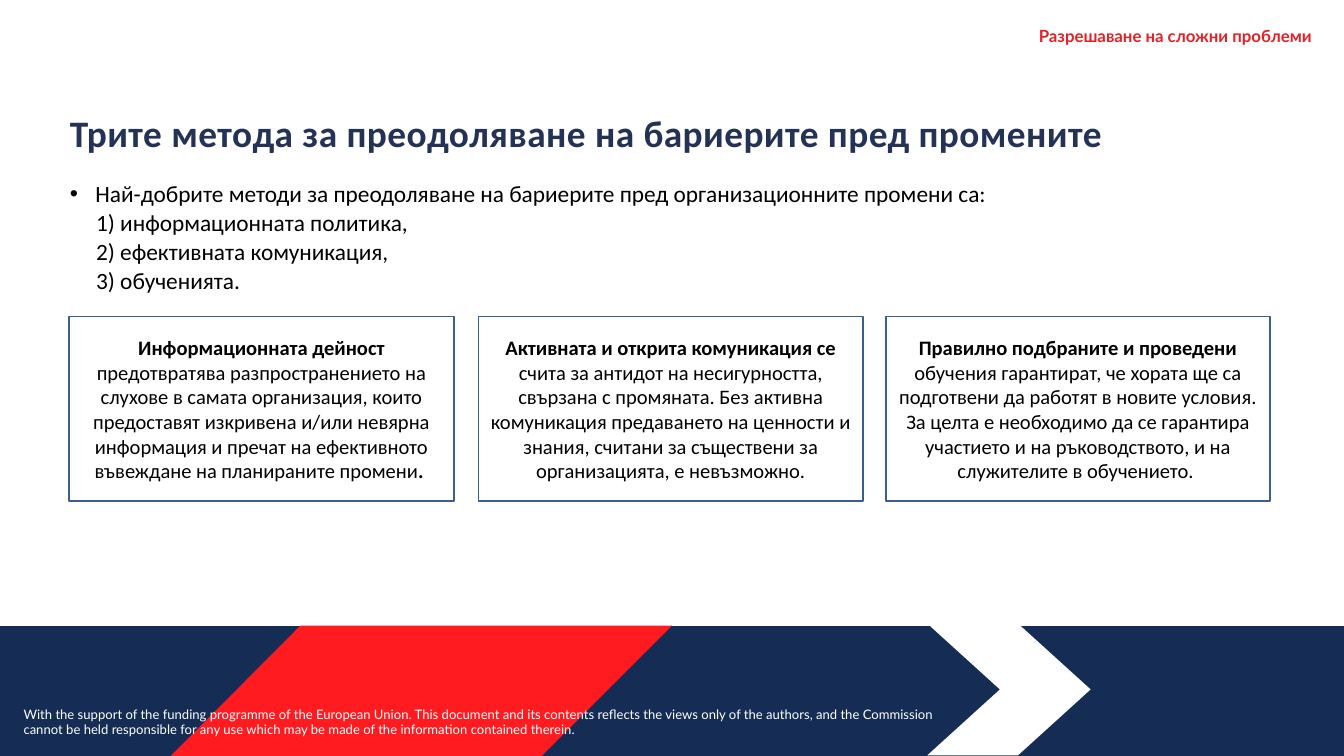
from dataclasses import dataclass

from lxml import etree
from pptx import Presentation
from pptx.dml.color import RGBColor
from pptx.enum.shapes import MSO_SHAPE
from pptx.enum.text import MSO_ANCHOR, PP_ALIGN
from pptx.oxml.ns import qn
from pptx.util import Inches, Pt

PROCESS = MSO_SHAPE.FLOWCHART_PROCESS
MIDDLE = MSO_ANCHOR.MIDDLE
CENTER, RIGHT = PP_ALIGN.CENTER, PP_ALIGN.RIGHT


@dataclass(frozen=True)
class Theme:
    navy: str = "152D54"
    red: str = "FF1B20"
    white: str = "FFFFFF"
    black: str = "000000"
    title: str = "243255"
    topic: str = "E12227"
    border: str = "3A5F8C"
    body_font: str = "Calibri"
    accent_font: str = "Lato"
    title_size: int = 40
    list_size: int = 25
    box_size: int = 22
    topic_size: int = 18
    footer_size: int = 14


T = Theme()


def add_run(p, text, color, **font):
    r = p.add_run()
    r.text = text
    r.font.color.rgb = RGBColor.from_string(color)
    for name, value in font.items():
        setattr(r.font, name, value)
    return r


def add_text_box(shapes, left, top, width, height, inset_top):
    """Add a wrapping text box without side insets and return its text frame."""
    tf = shapes.add_textbox(*map(Inches, (left, top, width, height))).text_frame
    margins = {"margin_left": 0, "margin_right": 0, "margin_bottom": 0,
               "margin_top": Inches(inset_top), "word_wrap": True}
    for name, value in margins.items():
        setattr(tf, name, value)
    return tf


prs = Presentation()
prs.slide_width, prs.slide_height = Inches(20), Inches(11.25)
s = prs.slides.add_slide(prs.slide_layouts[6])

# Footer band, white chevron and red slanted stripe
footer_art = [
    (T.navy, [(0, 9.31), (20, 9.31), (20, 11.25), (0, 11.25)]),
    (T.white, [(13.8, 9.28), (15.15, 9.28), (16.23, 10.26),
               (15.15, 11.24), (13.8, 11.24), (14.88, 10.26)]),
    (T.red, [(4.47, 9.31), (10, 9.31), (8.06, 11.25), (2.54, 11.25)]),
]
for color, corners in footer_art:
    points = [(Inches(x), Inches(y)) for x, y in corners]
    builder = s.shapes.build_freeform(*points[0])
    builder.add_line_segments(points[1:], close=True)
    sp = builder.convert_to_shape()
    sp.shadow.inherit = False
    sp.fill.solid()
    sp.fill.fore_color.rgb = RGBColor.from_string(color)
    sp.line.fill.background()

# Title and list of methods
tf = add_text_box(s.shapes, 1.04, 1.62, 15.8, 2.85, 0.02)
p = tf.paragraphs[0]
p.space_before = Pt(1.1)
r = add_run(p, "Трите метода за преодоляване на бариерите пред промените",
            T.title, name=T.body_font, size=Pt(T.title_size), bold=True)
r._r.get_or_add_rPr().set("spc", "50")

methods = [
    "Най-добрите методи за преодоляване на бариерите пред организационните промени са:",
    "1) информационната политика,",
    "2) ефективната комуникация,",
    "3) обученията.",
]
for i, text in enumerate(methods):
    p = tf.add_paragraph()
    p.space_before = Pt(1.1 if i else 26)
    pPr = p._p.get_or_add_pPr()
    pPr.set("marL", str(Inches(0.39 if i else 0.38)))
    if i == 0:
        pPr.set("indent", str(Inches(-0.38)))
        etree.SubElement(pPr, qn("a:buFont")).set("typeface", "Arial")
        etree.SubElement(pPr, qn("a:buChar")).set("char", "•")
    add_run(p, text, T.black, name=T.body_font, size=Pt(T.list_size))

# Funding note
tf = add_text_box(s.shapes, 0.35, 10.46, 13.55, 0.57, 0.05)
add_run(tf.paragraphs[0],
        "With the support of the funding programme of the European Union. "
        "This document and its contents reflects the views only of the authors, "
        "and the Commission cannot be held responsible for any use which may be "
        "made of the information contained therein.",
        T.white, name=T.accent_font, size=Pt(T.footer_size))

# One box per method: left edge, then (text, bold) runs
boxes = [
    (1.03, [("Информационната дейност ", True),
            ("предотвратява разпространението на слухове в самата организация, "
             "които предоставят изкривена и/или невярна информация и пречат на "
             "ефективното въвеждане на планираните промени", False),
            (". ", True)]),
    (7.12, [("Активната и открита комуникация се ", True),
            ("счита за антидот на несигурността, свързана с промяната. Без активна "
             "комуникация предаването на ценности и знания, считани за съществени "
             "за организацията, е невъзможно.", False)]),
    (13.18, [("Правилно подбраните и проведени ", True),
             ("обучения гарантират, че хората ще са подготвени да работят в новите "
              "условия. За целта е необходимо да се гарантира участието и на "
              "ръководството, и на служителите в обучението. ", False)]),
]
for left, runs in boxes:
    sp = s.shapes.add_shape(PROCESS, *map(Inches, (left, 4.71, 5.72, 2.75)))
    sp.shadow.inherit = False
    sp.fill.background()
    sp.line.color.rgb = RGBColor.from_string(T.border)
    sp.line.width = Pt(2)
    tf = sp.text_frame
    tf.word_wrap = True
    tf.vertical_anchor = MIDDLE
    p = tf.paragraphs[0]
    p.alignment = CENTER
    for text, bold in runs:
        add_run(p, text, T.black, name=T.body_font, size=Pt(T.box_size), bold=bold)

# Topic in the top right corner
tf = add_text_box(s.shapes, 9, 0.37, 10.52, 0.32, 0.01)
p = tf.paragraphs[0]
p.alignment = RIGHT
add_run(p, "Разрешаване на сложни проблеми", T.topic,
        name=T.accent_font, size=Pt(T.topic_size), bold=True)

prs.save("out.pptx")
